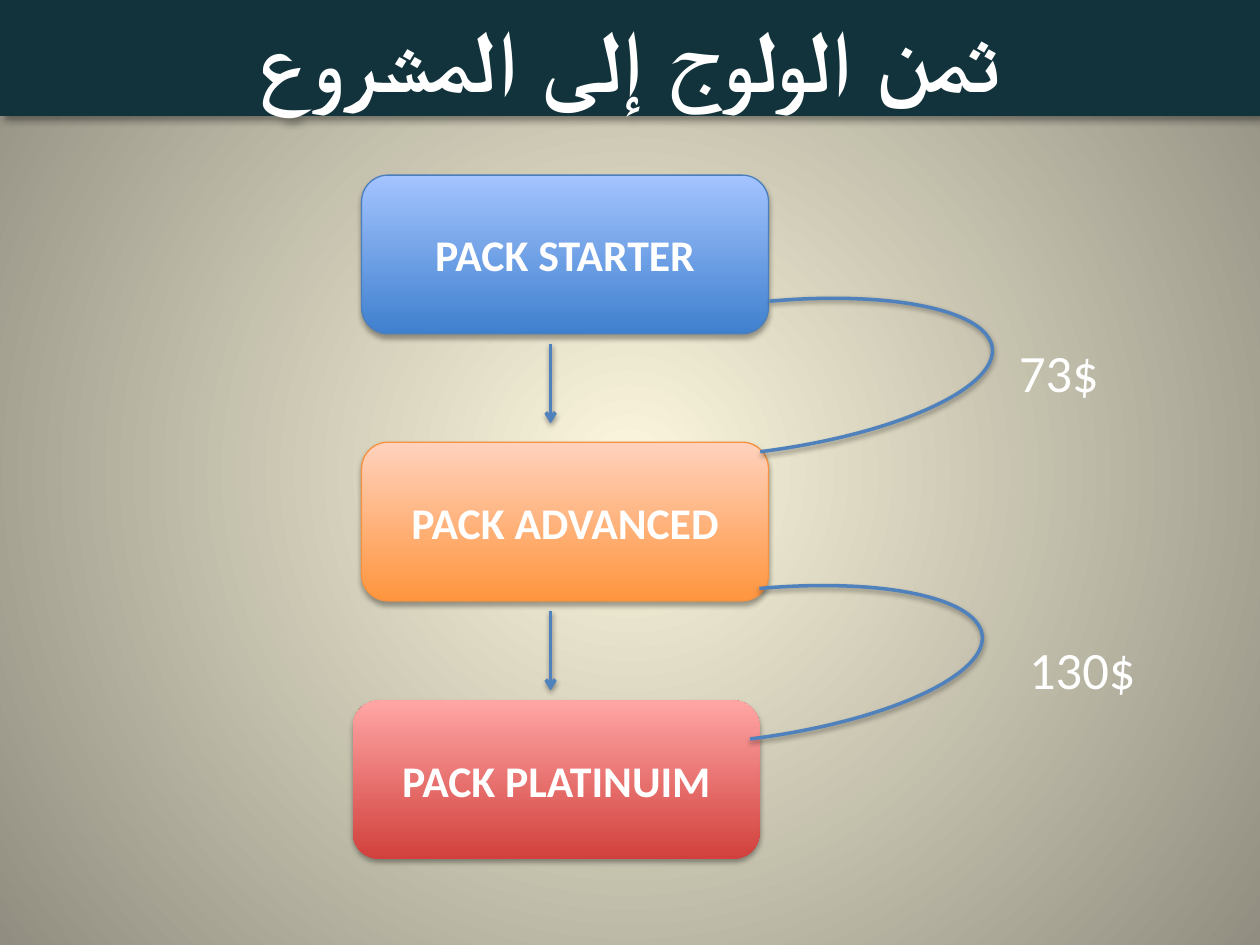
"""Builds the slide of project entry prices: three packs linked by arrows and arcs."""
from pptx import Presentation
from pptx.dml.color import RGBColor
from pptx.enum.shapes import MSO_CONNECTOR, MSO_SHAPE
from pptx.enum.text import MSO_ANCHOR, MSO_AUTO_SIZE, PP_ALIGN
from pptx.oxml import parse_xml
from pptx.oxml.ns import nsdecls
from pptx.util import Inches, Pt

ROUND, ARC = MSO_SHAPE.ROUNDED_RECTANGLE, MSO_SHAPE.ARC
STRAIGHT = MSO_CONNECTOR.STRAIGHT
MIDDLE, CENTER, LEFT = MSO_ANCHOR.MIDDLE, PP_ALIGN.CENTER, PP_ALIGN.LEFT
NONE = MSO_AUTO_SIZE.NONE
COLS, ROWS = 100, 75
CELL = Inches(10) / COLS

COLORS = {
    "white": "FFFFFF", "band": "12333B", "link": "4F81BD",
    "glow": "FCF7DD", "edge": "918E81",
    "blue": "3F80CE", "sky": "A4C4FF", "navy": "4B7EBC",
    "orange": "FF953E", "peach": "FFD2BD", "rust": "F69240",
    "red": "D1403C", "pink": "FFA6A5",
}
HEAD = {"name": "Arial", "size": Pt(50), "bold": True}
LABEL = {"name": "Calibri", "size": Pt(25), "bold": True}
PRICE = {"name": "Calibri", "size": Pt(30), "bold": False}
BAND_SHADE = (40, 4, 3, 45)
BOX_SHADE = (35, 3.1, 1.8, 90)
LINK_SHADE = (38, 3.1, 1.6, 90)

BOX = (32.3, 12.6)
PACKS = [
    ("PACK STARTER", 28.7, 13.9, ("blue", "sky"), "navy"),
    ("PACK ADVANCED", 28.7, 35.1, ("orange", "peach"), "rust"),
    ("PACK PLATINUIM", 28, 55.6, ("red", "pink"), None),
]
ARROWS = [27.3, 48.5]
ARCS = [(53.7, 10.7), (52.9, 33.5)]
PRICES = [("73$", 79.9, 26.5, 9.4), ("130$", 80.7, 50.1, 11)]


def color(name):
    """Return the named colour."""
    return RGBColor.from_string(COLORS[name])


def grid(*cells):
    """Turn counts of grid cells into lengths."""
    return [round(cell * CELL) for cell in cells]


def shade(shape, alpha, blur, gap, angle):
    """Give a shape or connector an outer shadow."""
    xml = (f'<a:effectLst {nsdecls("a")}><a:outerShdw blurRad="{Pt(blur)}" '
           f'dist="{Pt(gap)}" dir="{angle * 60000}" algn="t" rotWithShape="0">'
           f'<a:srgbClr val="000000"><a:alpha val="{alpha * 1000}"/></a:srgbClr>'
           f'</a:outerShdw></a:effectLst>')
    shape._element.spPr.append(parse_xml(xml))


def blend(fill, names):
    """Fill with a gradient of two colours."""
    fill.gradient()
    for stop, name in zip(fill.gradient_stops, names):
        stop.color.rgb = color(name)


def stroke(line, name, width):
    """Set the colour and width of a line."""
    line.color.rgb = color(name)
    line.width = Pt(width)


def write(shape, text, font, align):
    """Put one formatted line of text in a shape."""
    frame = shape.text_frame
    frame.word_wrap = True
    frame.auto_size = NONE
    para = frame.paragraphs[0]
    para.alignment = align
    run = para.add_run()
    run.text = text
    for key, value in font.items():
        setattr(run.font, key, value)
    run.font.color.rgb = color("white")


def add_back(slide):
    """Paint the round glow behind the slide."""
    fill = slide.background.fill
    blend(fill, ("glow", "edge"))
    grad = slide.background._cSld.bg.bgPr.find(".//{*}gradFill")
    grad.replace(grad.find("{*}lin"), parse_xml(
        f'<a:path {nsdecls("a")} path="circle"><a:fillToRect l="50000" '
        f't="50000" r="50000" b="50000"/></a:path>'))


def add_title(slide, text):
    """Turn the title into a full-width band."""
    title = slide.shapes.title
    title.left, title.top, title.width, title.height = grid(0, 0, COLS, 9.2)
    title.fill.solid()
    title.fill.fore_color.rgb = color("band")
    shade(title, *BAND_SHADE)
    write(title, text, HEAD, CENTER)
    title.text_frame.vertical_anchor = MIDDLE


def add_pack(slide, text, col, row, names, edge):
    """Add the rounded box of one pack."""
    box = slide.shapes.add_shape(ROUND, *grid(col, row, *BOX))
    blend(box.fill, names)
    box.fill.gradient_angle = 90
    if edge:
        stroke(box.line, edge, 0.75)
    else:
        box.line.fill.background()
    shade(box, *BOX_SHADE)
    write(box, text, LABEL, CENTER)
    box.text_frame.vertical_anchor = MIDDLE


def add_arrow(slide, row):
    """Add a downward arrow between two packs."""
    link = slide.shapes.add_connector(
        STRAIGHT, *grid(43.7, row, 43.7, row + 6.3))
    stroke(link.line, "link", 2)
    link.line._get_or_add_ln().append(
        parse_xml(f'<a:tailEnd {nsdecls("a")} type="arrow"/>'))
    shade(link, *LINK_SHADE)


def add_arc(slide, col, row):
    """Add the arc that leads from one pack to the next."""
    arc = slide.shapes.add_shape(ARC, *grid(col, row, 11.8, 38.6))
    arc.rotation = 82.9
    arc.adjustments[0] = 120.366
    arc.adjustments[1] = 0
    arc.fill.background()
    stroke(arc.line, "link", 2)
    shade(arc, *LINK_SHADE)


def add_price(slide, text, col, row, width):
    """Add the price beside an arc."""
    box = slide.shapes.add_textbox(*grid(col, row, width, 6.1))
    write(box, text, PRICE, LEFT)


def main():
    """Build and save the slide."""
    deck = Presentation()
    deck.slide_width, deck.slide_height = grid(COLS, ROWS)
    slide = deck.slides.add_slide(deck.slide_layouts[5])
    add_back(slide)
    add_title(slide, "ثمن الولوج إلى المشروع")
    for pack in PACKS:
        add_pack(slide, *pack)
    for row in ARROWS:
        add_arrow(slide, row)
    for spot in ARCS:
        add_arc(slide, *spot)
    for price in PRICES:
        add_price(slide, *price)
    deck.save("out.pptx")


if __name__ == "__main__":
    main()
